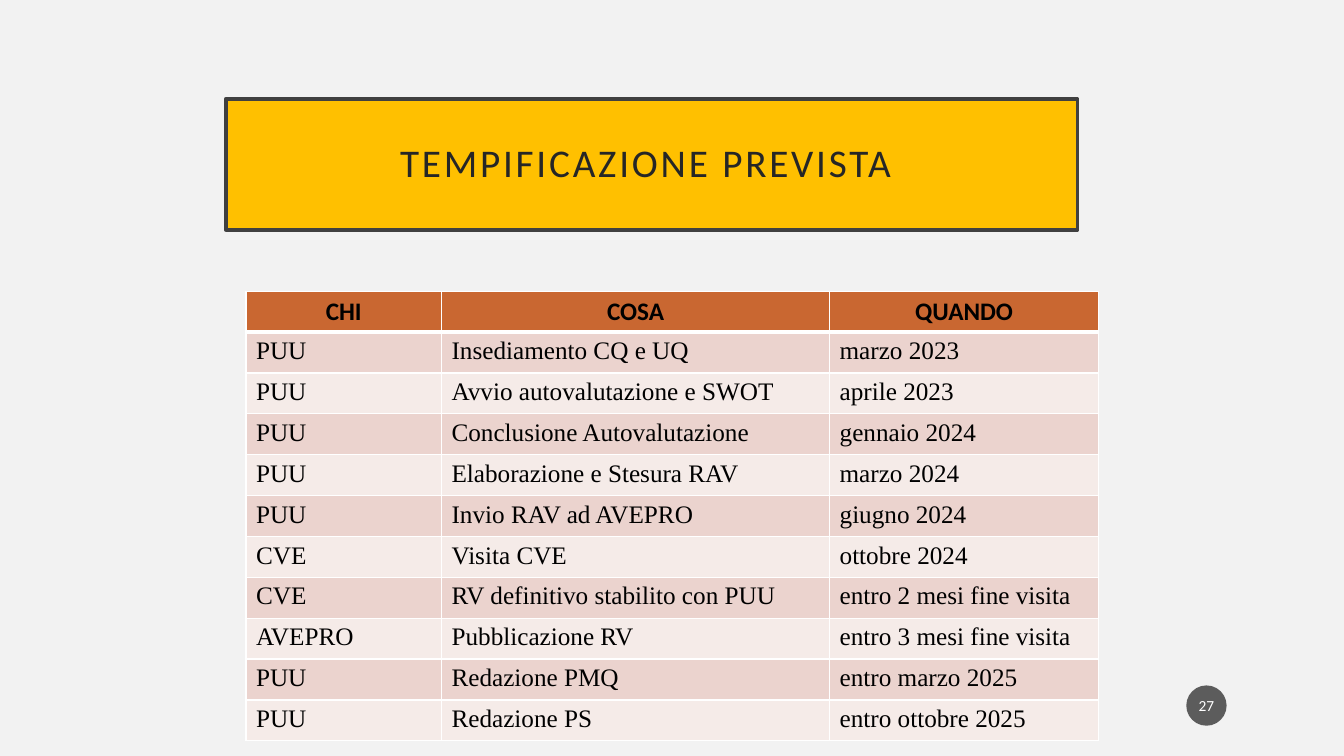
from dataclasses import dataclass

from lxml.etree import SubElement as Sub
from pptx import Presentation
from pptx.dml.color import RGBColor as Rgb
from pptx.enum.shapes import MSO_SHAPE as Kind
from pptx.enum.text import MSO_ANCHOR as Anchor, PP_ALIGN as Align
from pptx.oxml import parse_xml
from pptx.oxml.ns import nsdecls, qn
from pptx.util import Pt

HUES = {
    "page": "F2F2F2", "gold": "FFC000", "frame": "404040", "title": "262626",
    "badge": "1D1D1D", "white": "FFFFFF", "black": "000000",
    "head": "C96731", "odd": "EBD3CE", "even": "F5EBE8",
}
HEADS = ("CHI", "COSA", "QUANDO")
WIDTHS = (139.7, 277.2, 192.2)
ROW = 29.2


@dataclass
class Step:
    who: str
    what: str
    when: str


@dataclass
class Box:
    kind: Kind
    left: float
    top: float
    width: float
    height: float
    fill: str
    pad: tuple[float, float]
    line: float = 0
    alpha: int = 100


STEPS = [
    Step("PUU", "Insediamento CQ e UQ", "marzo 2023"),
    Step("PUU", "Avvio autovalutazione e SWOT", "aprile 2023"),
    Step("PUU", "Conclusione Autovalutazione", "gennaio 2024"),
    Step("PUU", "Elaborazione e Stesura RAV", "marzo 2024"),
    Step("PUU", "Invio RAV ad AVEPRO", "giugno 2024"),
    Step("CVE", "Visita CVE", "ottobre 2024"),
    Step("CVE", "RV definitivo stabilito con PUU", "entro 2 mesi fine visita"),
    Step("AVEPRO", "Pubblicazione RV", "entro 3 mesi fine visita"),
    Step("PUU", "Redazione PMQ", "entro marzo 2025"),
    Step("PUU", "Redazione PS", "entro ottobre 2025"),
]
TITLE = Box(Kind.RECTANGLE, 161.3, 70.6, 608.4, 93.6, "gold", (14.4, 14.4), line=2.5)
BADGE = Box(Kind.OVAL, 847.4, 489.6, 28.8, 28.8, "badge", (1.4, 3.6), alpha=70)


def hue(name: str) -> Rgb:
    return Rgb.from_string(HUES[name])


def write(frame, text: str, size: float = 18, font: str = "Calibri",
          color: str = "black", bold: bool = False, align=Align.CENTER,
          space: float = 1, track: int = 0) -> None:
    """Put one formatted run in the frame; track is letter spacing in points."""
    para = frame.paragraphs[0]
    para.alignment = align
    para.line_spacing = space
    run = para.add_run()
    run.text = text
    run.font.size = Pt(size)
    run.font.name = font
    run.font.bold = bold
    run.font.color.rgb = hue(color)
    if track:
        run.font._element.set("spc", str(track * 100))


def draw(slide, box: Box):
    """Add the box and return its text frame."""
    shape = slide.shapes.add_shape(
        box.kind, Pt(box.left), Pt(box.top), Pt(box.width), Pt(box.height))
    shape.shadow.inherit = False
    shape.fill.solid()
    shape.fill.fore_color.rgb = hue(box.fill)
    if box.alpha < 100:
        tint = shape._element.spPr.find(qn("a:solidFill"))[0]
        Sub(tint, qn("a:alpha"), val=str(box.alpha * 1000))
    if box.line:
        shape.line.color.rgb = hue("frame")
        shape.line.width = Pt(box.line)
    else:
        shape.line.fill.background()
    frame = shape.text_frame
    frame.word_wrap = True
    frame.vertical_anchor = Anchor.MIDDLE
    frame.margin_left = frame.margin_right = Pt(box.pad[0])
    frame.margin_top = frame.margin_bottom = Pt(box.pad[1])
    return frame


def edge(cell, top: float, base: float) -> None:
    """Give the cell white borders; the widths are in points."""
    props = cell._tc.get_or_add_tcPr()
    sides = {"lnL": 1, "lnR": 1, "lnT": top, "lnB": base}
    for spot, (tag, width) in enumerate(sides.items()):
        props.insert(spot, parse_xml(
            f'<a:{tag} {nsdecls("a")} w="{Pt(width)}"><a:solidFill>'
            f'<a:srgbClr val="{HUES["white"]}"/></a:solidFill></a:{tag}>'))


def plan(slide) -> None:
    """Add the table of steps."""
    rows = [HEADS] + [(s.who, s.what, s.when) for s in STEPS]
    grid = slide.shapes.add_table(
        len(rows), len(HEADS), Pt(175.7), Pt(208), Pt(sum(WIDTHS)),
        Pt(ROW * len(rows))).table
    for col, width in zip(grid.columns, WIDTHS):
        col.width = Pt(width)
    for r, texts in enumerate(rows):
        grid.rows[r].height = Pt(ROW)
        fill = "head" if r == 0 else "odd" if r % 2 else "even"
        look = ({"bold": True} if r == 0 else
                {"font": "Times New Roman", "align": Align.LEFT})
        for c, text in enumerate(texts):
            cell = grid.cell(r, c)
            cell.fill.solid()
            cell.fill.fore_color.rgb = hue(fill)
            edge(cell, top=3 if r == 1 else 1, base=3 if r == 0 else 1)
            write(cell.text_frame, text, **look)


def main() -> None:
    deck = Presentation()
    deck.slide_width, deck.slide_height = Pt(960), Pt(540)
    slide = deck.slides.add_slide(deck.slide_layouts[6])
    slide.background.fill.solid()
    slide.background.fill.fore_color.rgb = hue("page")
    write(draw(slide, TITLE), "TEMPIFICAZIONE PREVISTA ", size=28,
          color="title", space=0.9, track=2)
    write(draw(slide, BADGE), "27", size=11, color="white")
    plan(slide)
    deck.save("out.pptx")


if __name__ == "__main__":
    main()
